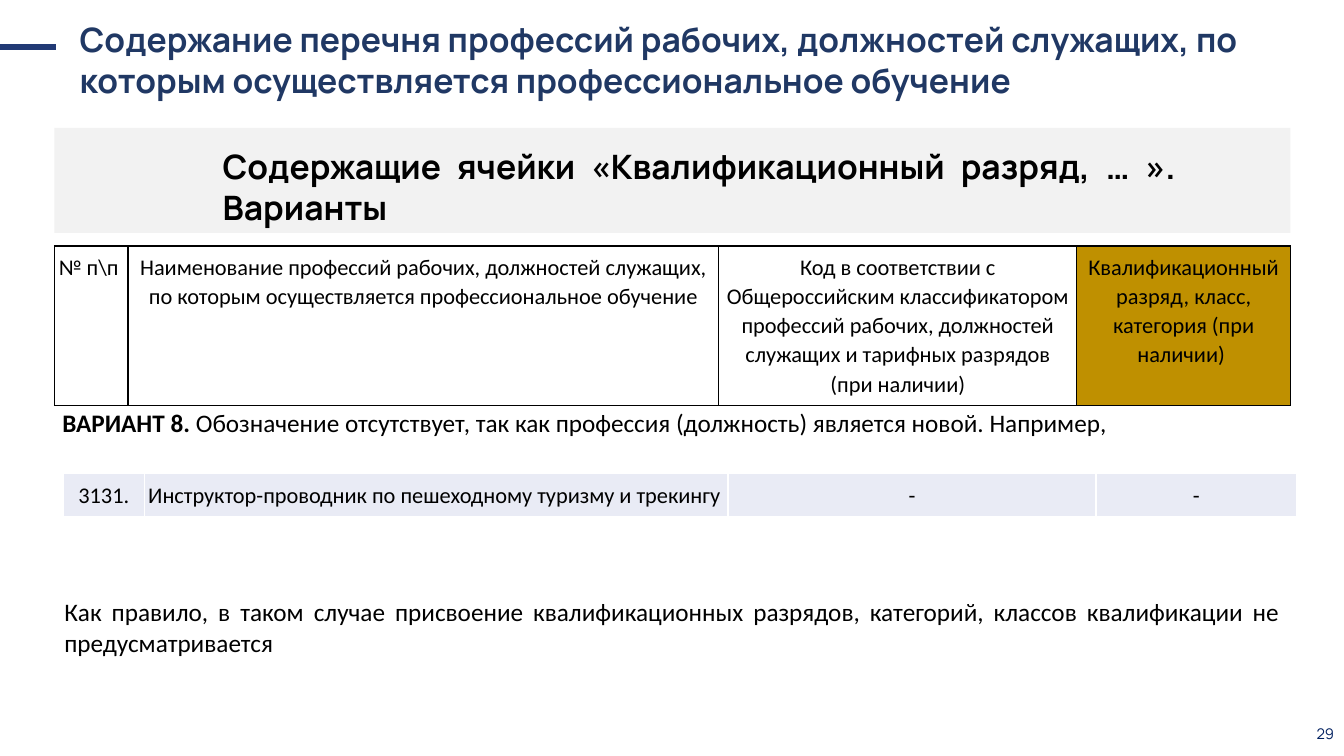
from dataclasses import dataclass
from typing import Optional

from lxml.etree import SubElement
from pptx import Presentation
from pptx.dml.color import RGBColor
from pptx.enum.shapes import MSO_CONNECTOR, MSO_SHAPE
from pptx.enum.text import MSO_ANCHOR, MSO_AUTO_SIZE, PP_ALIGN
from pptx.oxml.ns import qn
from pptx.util import Inches, Pt

COLORS = {
    "black": "000000", "white": "FFFFFF", "title": "203864", "number": "002060",
    "accent": "213A75", "band": "F2F2F2", "gold": "BF9000", "row": "E9EBF5",
}


@dataclass
class Run:
    text: str
    bold: bool = False


@dataclass
class TextSpec:
    box: tuple[float, float, float, float]
    runs: list[Run]
    size: float
    font: str = "Calibri"
    color: str = "black"
    align: PP_ALIGN = PP_ALIGN.JUSTIFY
    anchor: MSO_ANCHOR = MSO_ANCHOR.TOP
    line_spacing: Optional[float] = None
    space_after: float = 0


@dataclass
class Cell:
    text: str
    fill: Optional[str] = None
    align: PP_ALIGN = PP_ALIGN.CENTER


@dataclass
class TableSpec:
    left: float
    top: float
    height: float
    widths: list[float]
    border: str
    cells: list[Cell]


TITLE = TextSpec(
    (0.69, 0.14, 12.11, 0.91),
    [Run("Содержание перечня профессий рабочих, должностей служащих, "
         "по которым осуществляется профессиональное обучение", True)],
    24, "Manrope", "title", PP_ALIGN.LEFT)

TEXTS = [
    TextSpec((2.11, 1.4, 9.65, 0.91),
             [Run("Содержащие ячейки «Квалификационный разряд, … ». Варианты", True)],
             24, "Manrope"),
    TextSpec((0.52, 3.84, 12.25, 1.03),
             [Run("ВАРИАНТ 8.", True),
              Run(" Обозначение отсутствует, так как профессия (должность) "
                  "является новой. Например,")],
             18, line_spacing=1.5, space_after=8),
    TextSpec((0.54, 5.87, 12.25, 0.71),
             [Run("Как правило, в таком случае присвоение квалификационных разрядов, "
                  "категорий, классов квалификации не предусматривается")], 18),
    TextSpec((12.81, 7.08, 0.52, 0.4), [Run("29")], 10.5, "Manrope", "number",
             PP_ALIGN.RIGHT, MSO_ANCHOR.MIDDLE),
]

TABLES = [
    TableSpec(0.54, 2.44, 1.54, [0.73, 5.86, 3.55, 2.12], "black", [
        Cell("№ п\\п "),
        Cell("Наименование профессий рабочих, должностей служащих, "
             "по которым осуществляется профессиональное обучение"),
        Cell("Код в соответствии с Общероссийским классификатором профессий рабочих, "
             "должностей служащих и тарифных разрядов (при наличии)"),
        Cell("Квалификационный разряд, класс, категория (при наличии) ", "gold"),
    ]),
    TableSpec(0.63, 4.7, 0.41, [0.8, 5.79, 3.65, 1.99], "white", [
        Cell("3131.", "row"),
        Cell("Инструктор-проводник по пешеходному туризму и трекингу", "row", PP_ALIGN.LEFT),
        Cell("-", "row"),
        Cell("-", "row"),
    ]),
]


def rgb(name: str) -> RGBColor:
    """Return a palette colour."""
    return RGBColor.from_string(COLORS[name])


def style_run(r, size: float, font: str, color: str, bold: bool = False) -> None:
    """Format one run."""
    r.font.size = Pt(size)
    r.font.name = font
    r.font.bold = bold
    r.font.color.rgb = rgb(color)


def fill_text(sp, item: TextSpec) -> None:
    """Place a text shape and write its formatted runs."""
    sp.left, sp.top, sp.width, sp.height = map(Inches, item.box)
    tf = sp.text_frame
    tf.word_wrap = True
    tf.auto_size = MSO_AUTO_SIZE.NONE
    tf.vertical_anchor = item.anchor
    p = tf.paragraphs[0]
    p.alignment = item.align
    p.line_spacing = item.line_spacing
    p.space_before = Pt(0)
    p.space_after = Pt(item.space_after)
    for part in item.runs:
        r = p.add_run()
        r.text = part.text
        style_run(r, item.size, item.font, item.color, part.bold)


def set_borders(cell, color: str) -> None:
    """Give a cell one-point borders on all four sides."""
    tc_pr = cell._tc.get_or_add_tcPr()
    for i, side in enumerate(("lnL", "lnR", "lnT", "lnB")):
        ln = SubElement(tc_pr, qn(f"a:{side}"), w=str(Pt(1)))
        fill = SubElement(ln, qn("a:solidFill"))
        SubElement(fill, qn("a:srgbClr"), val=COLORS[color])
        tc_pr.insert(i, ln)


def add_row_table(s, item: TableSpec) -> None:
    """Draw a table of one row."""
    table = s.shapes.add_table(
        1, len(item.cells), Inches(item.left), Inches(item.top),
        Inches(sum(item.widths)), Inches(item.height)).table
    table.first_row = table.horz_banding = False
    for i, (width, content) in enumerate(zip(item.widths, item.cells)):
        table.columns[i].width = Inches(width)
        cell = table.cell(0, i)
        cell.margin_left = cell.margin_right = Inches(0.04)
        cell.margin_top = cell.margin_bottom = Inches(0.07)
        if content.fill:
            cell.fill.solid()
            cell.fill.fore_color.rgb = rgb(content.fill)
        else:
            cell.fill.background()
        set_borders(cell, item.border)
        p = cell.text_frame.paragraphs[0]
        p.text = content.text
        p.alignment = content.align
        p.line_spacing = 1.06
        p.space_after = Pt(8)
        style_run(p.runs[0], 16, "Calibri", "black")


def main() -> None:
    """Build and save the slide."""
    prs = Presentation()
    prs.slide_width, prs.slide_height = Inches(13.33), Inches(7.5)
    s = prs.slides.add_slide(prs.slide_layouts[5])

    band = s.shapes.add_shape(MSO_SHAPE.RECTANGLE, Inches(0.54), Inches(1.27),
                              Inches(12.26), Inches(1.04))
    band.shadow.inherit = False
    band.fill.solid()
    band.fill.fore_color.rgb = rgb("band")
    band.line.fill.background()

    fill_text(s.shapes.title, TITLE)
    dash = s.shapes.add_connector(MSO_CONNECTOR.STRAIGHT, Inches(0), Inches(0.47),
                                  Inches(0.56), Inches(0.47))
    dash.line.color.rgb = rgb("accent")
    dash.line.width = Pt(4.5)
    SubElement(dash._element.spPr, qn("a:effectLst"))

    for table in TABLES:
        add_row_table(s, table)
    for text in TEXTS:
        fill_text(s.shapes.add_textbox(*map(Inches, text.box)), text)
    prs.save("out.pptx")


if __name__ == "__main__":
    main()
